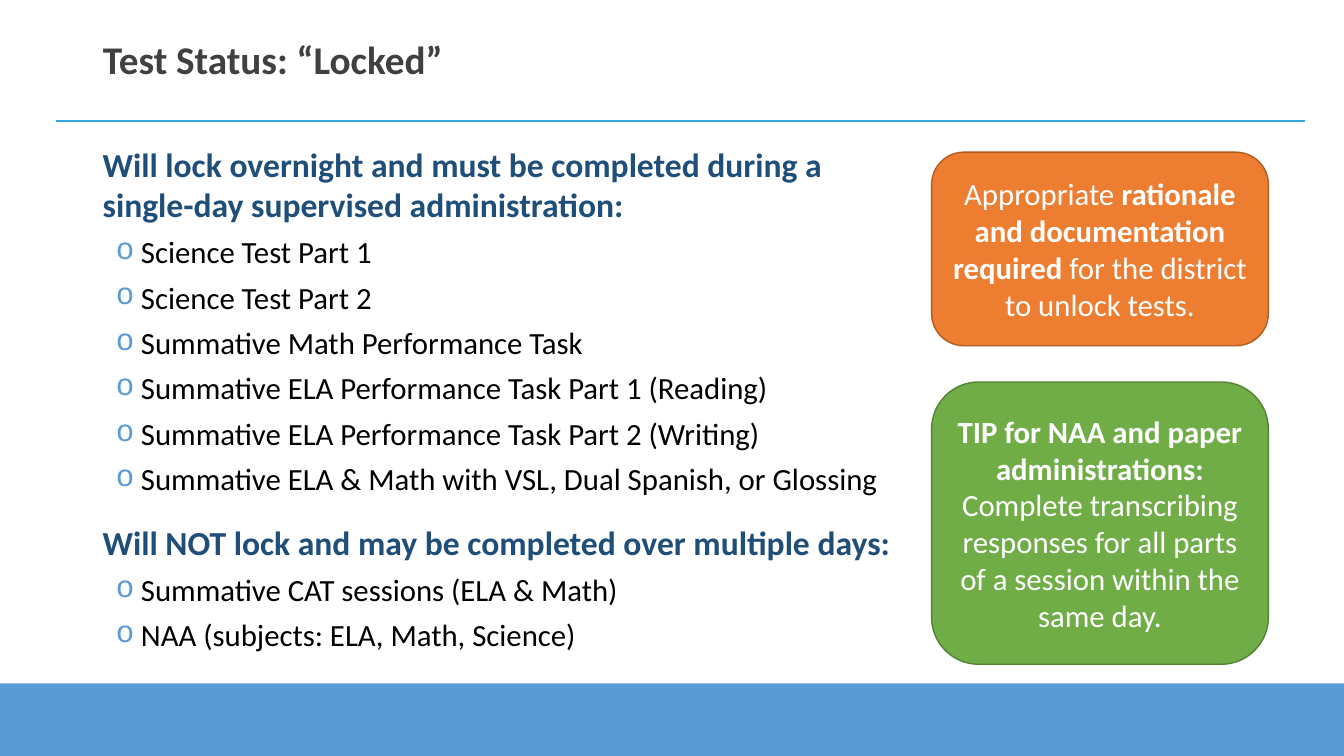
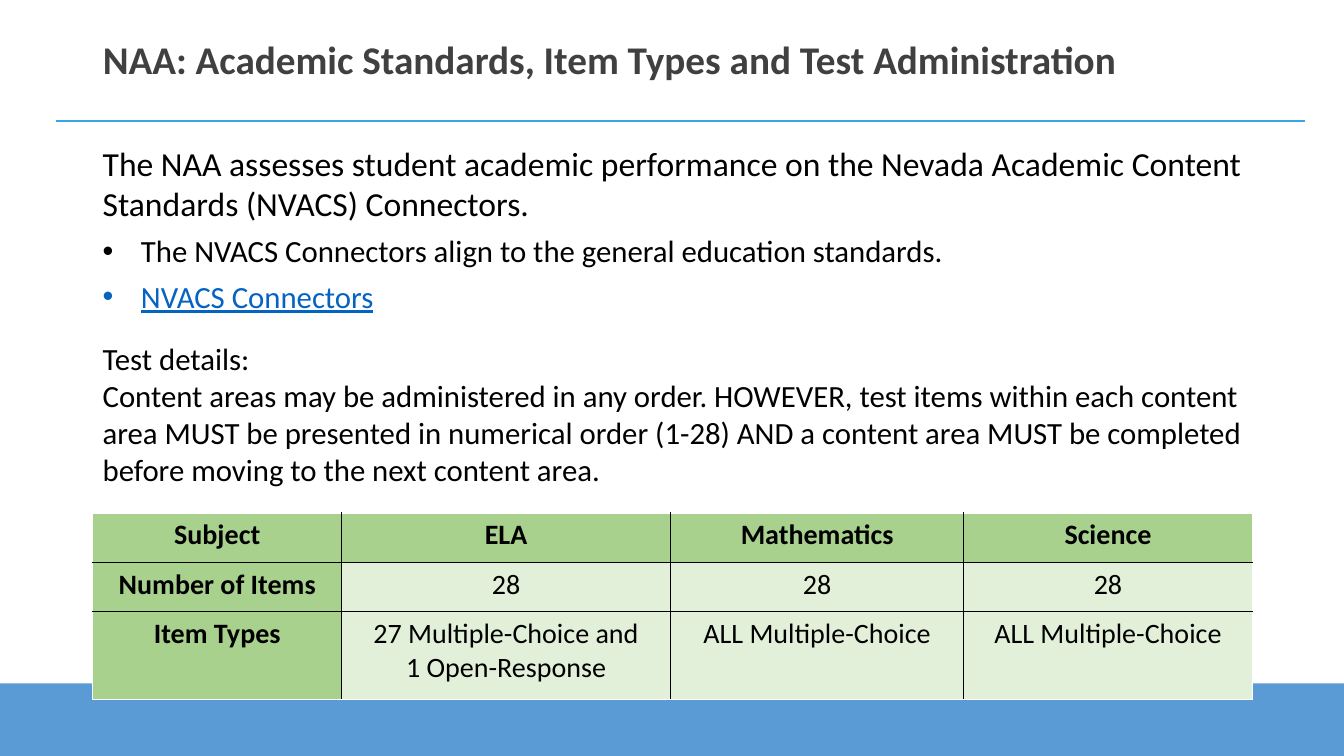
from lxml import etree
from pptx import Presentation
from pptx.dml.color import RGBColor
from pptx.enum import shapes, text
from pptx.oxml import ns
from pptx.util import Inches, Pt

FONT = "Calibri"
BLACK = RGBColor(0, 0, 0)
WHITE = RGBColor(0xFF, 0xFF, 0xFF)
TITLE_GREY = RGBColor(0x40, 0x40, 0x40)
BAND_BLUE = RGBColor(0x5B, 0x9B, 0xD5)
RULE_BLUE = RGBColor(0x37, 0xA7, 0xDF)
HEADING_BLUE = RGBColor(0x1F, 0x4E, 0x79)
LINK_BLUE = RGBColor(0x05, 0x63, 0xC1)
ORANGE = RGBColor(0xED, 0x7D, 0x31)
DARK_ORANGE = RGBColor(0xAF, 0x5C, 0x24)
GREEN = RGBColor(0x70, 0xAD, 0x47)
DARK_GREEN = RGBColor(0x54, 0x82, 0x35)
HEADER_GREEN = RGBColor(0xA9, 0xD1, 0x8E)
CELL_GREEN = RGBColor(0xE2, 0xF0, 0xD9)

LEFT, CONTENT_WIDTH = 0.92, 11.5

# Paragraph styles: size, colour, and optional bold, underline, before, after, bullet
HEADING = dict(size=24, color=HEADING_BLUE, bold=True, after=6)
CIRCLE_ITEM = dict(size=22, color=BLACK, after=6,
                   bullet=("o", "Courier New", BAND_BLUE, 0.25))
INTRO = dict(size=24, color=BLACK, after=6)
DOT_ITEM = dict(size=22, color=BLACK, after=6, bullet=("•", "Arial", None, 0.38))
LINK_ITEM = dict(DOT_ITEM, color=LINK_BLUE, underline=True)
DETAIL_LABEL = dict(size=22, color=BLACK, before=12)
DETAIL = dict(size=22, color=BLACK, after=6)

LOCK_TITLE = "Test Status: “Locked”"
LOCK_TEXT = [
    ("Will lock overnight and must be completed during a single-day "
     "supervised administration:", HEADING),
    ("Science Test Part 1", CIRCLE_ITEM),
    ("Science Test Part 2", CIRCLE_ITEM),
    ("Summative Math Performance Task", CIRCLE_ITEM),
    ("Summative ELA Performance Task Part 1 (Reading)", CIRCLE_ITEM),
    ("Summative ELA Performance Task Part 2 (Writing)", CIRCLE_ITEM),
    ("Summative ELA & Math with VSL, Dual Spanish, or Glossing", CIRCLE_ITEM),
    ("Will NOT lock and may be completed over multiple days:",
     dict(HEADING, before=12)),
    ("Summative CAT sessions (ELA & Math)", CIRCLE_ITEM),
    ("NAA (subjects: ELA, Math, Science)", CIRCLE_ITEM),
]
# Top, height, fill, outline, (text, bold) runs
CALLOUTS = [
    (1.51, 1.92, ORANGE, DARK_ORANGE,
     [("Appropriate ", False),
      ("rationale and documentation required ", True),
      ("for the district to unlock tests.", False)]),
    (3.79, 2.8, GREEN, DARK_GREEN,
     [("TIP for NAA and paper administrations: ", True),
      ("Complete transcribing responses for all parts of a session "
       "within the same day.", False)]),
]

NAA_TITLE = "NAA: Academic Standards, Item Types and Test Administration"
NAA_TEXT = [
    ("The NAA assesses student academic performance on the Nevada Academic "
     "Content Standards (NVACS) Connectors.", INTRO),
    ("The NVACS Connectors align to the general education standards.", DOT_ITEM),
    ("NVACS Connectors", LINK_ITEM),
    ("Test details:", DETAIL_LABEL),
    ("Content areas may be administered in any order. HOWEVER, test items "
     "within each content area MUST be presented in numerical order (1-28) "
     "AND a content area MUST be completed before moving to the next content "
     "area.", DETAIL),
]
TABLE_ROWS = [
    ["Subject", "ELA", "Mathematics", "Science"],
    ["Number of Items", "28", "28", "28"],
    ["Item Types", "27 Multiple-Choice and\n1 Open-Response",
     "ALL Multiple-Choice", "ALL Multiple-Choice"],
]
COLUMN_WIDTHS = [2.47, 3.26, 2.91, 2.86]
ROW_HEIGHTS = [0.49, 0.49, 0.87]


def set_font(font, size, color, bold=False, underline=None):
    font.name, font.size, font.bold = FONT, Pt(size), bold
    font.underline = underline
    font.color.rgb = color


def add_bullet(paragraph, character, typeface, color, hanging):
    properties = paragraph._p.get_or_add_pPr()
    properties.set("marL", str(Inches(0.38)))
    properties.set("indent", str(-Inches(hanging)))
    if color is not None:
        bullet_color = etree.SubElement(properties, ns.qn("a:buClr"))
        etree.SubElement(bullet_color, ns.qn("a:srgbClr"), val=str(color))
    etree.SubElement(properties, ns.qn("a:buFont"), typeface=typeface)
    etree.SubElement(properties, ns.qn("a:buChar"), char=character)


def add_titled_slide(presentation, title_text):
    """Add a slide with the shared bottom band, title and rule."""
    slide = presentation.slides.add_slide(presentation.slide_layouts[5])
    band = slide.shapes.add_shape(
        shapes.MSO_SHAPE.RECTANGLE, 0, Inches(6.78),
        presentation.slide_width, Inches(0.72))
    band.shadow.inherit = False
    band.fill.solid()
    band.fill.fore_color.rgb = BAND_BLUE
    band.line.fill.background()

    rule = slide.shapes.add_connector(
        shapes.MSO_CONNECTOR.STRAIGHT,
        Inches(0.56), Inches(1.2), Inches(12.94), Inches(1.2))
    rule.line.color.rgb = RULE_BLUE
    rule.line.width = Pt(1.25)
    etree.SubElement(rule._element.spPr, ns.qn("a:effectLst"))

    title = slide.shapes.title
    title.left, title.top = Inches(LEFT), Inches(0.02)
    title.width, title.height = Inches(CONTENT_WIDTH), Inches(1.18)
    frame = title.text_frame
    frame.text = title_text
    frame.auto_size = text.MSO_AUTO_SIZE.NONE
    frame.vertical_anchor = text.MSO_ANCHOR.MIDDLE
    paragraph = frame.paragraphs[0]
    paragraph.alignment = text.PP_ALIGN.LEFT
    paragraph.line_spacing = 0.9
    set_font(paragraph.font, 28, TITLE_GREY, bold=True)
    return slide


def add_body(slide, top, width, height, content):
    box = slide.shapes.add_textbox(
        Inches(LEFT), Inches(top), Inches(width), Inches(height))
    frame = box.text_frame
    frame.word_wrap = True
    for index, (words, style) in enumerate(content):
        paragraph = frame.add_paragraph() if index else frame.paragraphs[0]
        paragraph.text = words
        if "bullet" in style:
            add_bullet(paragraph, *style["bullet"])
        paragraph.space_before = Pt(style.get("before", 0))
        paragraph.space_after = Pt(style.get("after", 0))
        set_font(paragraph.font, style["size"], style["color"],
                 style.get("bold", False), style.get("underline"))


def add_callout(slide, top, height, fill, outline, runs):
    callout = slide.shapes.add_shape(
        shapes.MSO_SHAPE.ROUNDED_RECTANGLE,
        Inches(9.24), Inches(top), Inches(3.34), Inches(height))
    callout.shadow.inherit = False
    callout.fill.solid()
    callout.fill.fore_color.rgb = fill
    callout.line.color.rgb = outline
    callout.line.width = Pt(1)
    frame = callout.text_frame
    frame.word_wrap = True
    frame.vertical_anchor = text.MSO_ANCHOR.MIDDLE
    paragraph = frame.paragraphs[0]
    paragraph.alignment = text.PP_ALIGN.CENTER
    for words, bold in runs:
        run = paragraph.add_run()
        run.text = words
        set_font(run.font, 22, WHITE, bold)


def add_borders(cell, sides):
    """Draw black borders on the given sides; call before filling the cell."""
    properties = cell._tc.get_or_add_tcPr()
    for side in sides:
        border = etree.SubElement(properties, ns.qn(f"a:ln{side}"), w=str(Pt(1)))
        fill = etree.SubElement(border, ns.qn("a:solidFill"))
        etree.SubElement(fill, ns.qn("a:srgbClr"), val=str(BLACK))


def add_subject_table(slide):
    last_row, last_column = len(TABLE_ROWS) - 1, len(COLUMN_WIDTHS) - 1
    table = slide.shapes.add_table(
        len(TABLE_ROWS), len(COLUMN_WIDTHS), Inches(LEFT), Inches(5.09),
        Inches(CONTENT_WIDTH), Inches(sum(ROW_HEIGHTS))).table
    table.first_row = table.horz_banding = False
    for column, width in zip(table.columns, COLUMN_WIDTHS):
        column.width = Inches(width)
    for row_index, values in enumerate(TABLE_ROWS):
        table.rows[row_index].height = Inches(ROW_HEIGHTS[row_index])
        for column_index, value in enumerate(values):
            cell = table.cell(row_index, column_index)
            inner = {"L": column_index > 0, "R": column_index < last_column,
                     "T": row_index > 0, "B": row_index < last_row}
            add_borders(cell, [side for side, drawn in inner.items() if drawn])
            is_header = row_index == 0 or column_index == 0
            cell.fill.solid()
            cell.fill.fore_color.rgb = HEADER_GREEN if is_header else CELL_GREEN
            cell.text = value
            for paragraph in cell.text_frame.paragraphs:
                paragraph.alignment = text.PP_ALIGN.CENTER
                set_font(paragraph.font, 20, BLACK, is_header)


def main():
    presentation = Presentation()
    presentation.slide_width = Inches(13.33)
    presentation.slide_height = Inches(7.5)

    lock_slide = add_titled_slide(presentation, LOCK_TITLE)
    add_body(lock_slide, 1.38, 8.16, 5.3, LOCK_TEXT)
    for callout in CALLOUTS:
        add_callout(lock_slide, *callout)

    naa_slide = add_titled_slide(presentation, NAA_TITLE)
    add_body(naa_slide, 1.37, CONTENT_WIDTH, 3.36, NAA_TEXT)
    add_subject_table(naa_slide)

    presentation.save("out.pptx")


if __name__ == "__main__":
    main()
